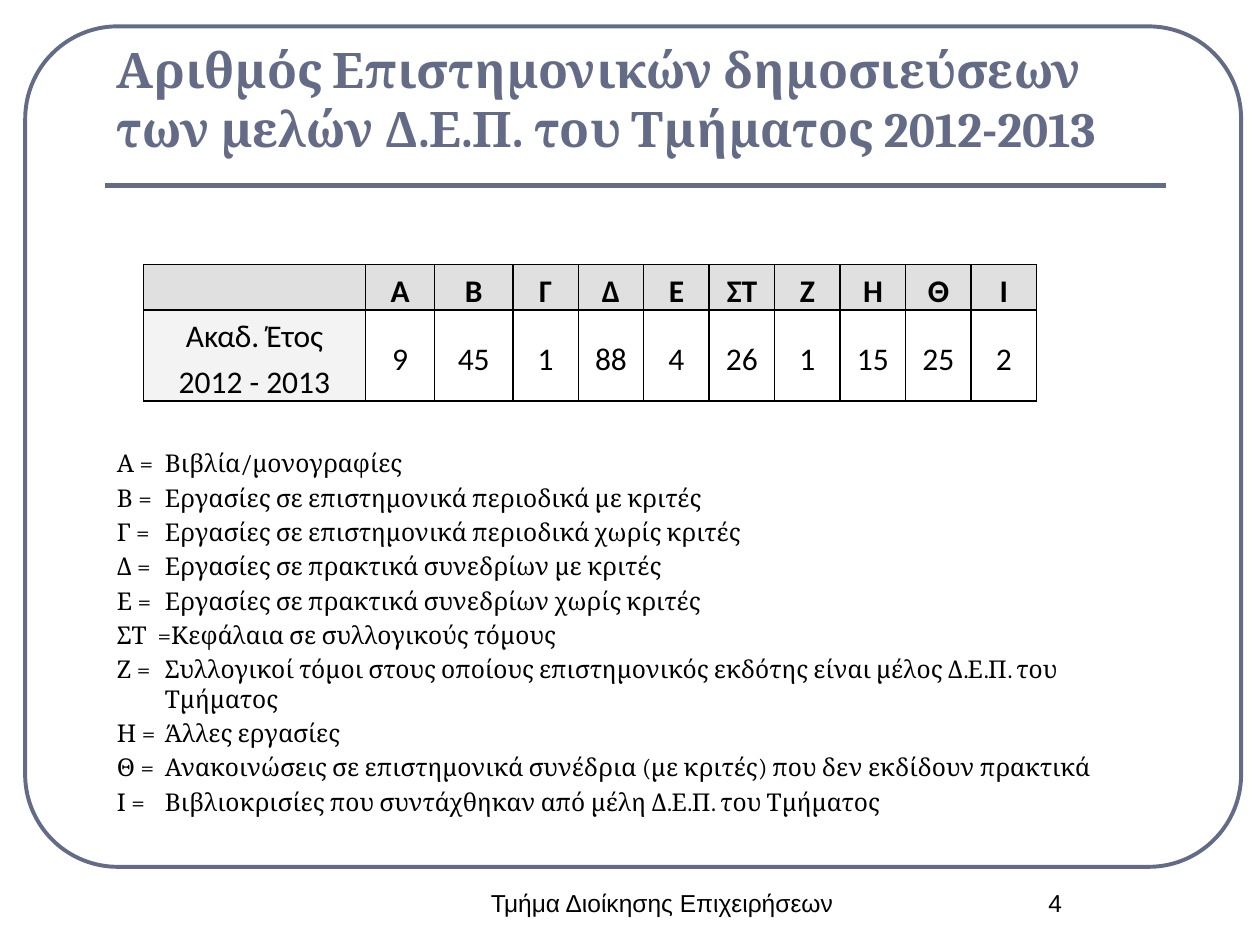
from dataclasses import dataclass

from lxml import etree
from pptx import Presentation
from pptx import util as u
from pptx.dml.color import RGBColor
from pptx.enum import shapes, text
from pptx.oxml.ns import qn

SLATE = RGBColor(0x64, 0x6B, 0x86)
BLACK = RGBColor(0, 0, 0)
GREY = RGBColor(0xE0, 0xE0, 0xE0)
PALE = RGBColor(0xF3, 0xF3, 0xF3)

WIDE, HIGH = 10, 7.5
LEFT, SPAN = 0.83, 8.42  # shared column of title, rule and key
HANG = 0.38
ROW = 0.36
COLS = [1.76, 0.55, 0.62] + [0.52] * 8


@dataclass
class Item:
    sign: str
    count: int
    label: str
    sep: str = " =\t"


@dataclass
class Style:
    size: float
    face: str
    color: RGBColor = BLACK
    bold: bool = False
    align: text.PP_ALIGN = text.PP_ALIGN.LEFT


ITEMS = [
    Item("Α", 9, "Βιβλία/μονογραφίες"),
    Item("Β", 45, "Εργασίες σε επιστημονικά περιοδικά με κριτές"),
    Item("Γ", 1, "Εργασίες σε επιστημονικά περιοδικά χωρίς κριτές"),
    Item("Δ", 88, "Εργασίες σε πρακτικά συνεδρίων με κριτές"),
    Item("Ε", 4, "Εργασίες σε πρακτικά συνεδρίων χωρίς κριτές"),
    Item("ΣΤ", 26, "Κεφάλαια σε συλλογικούς τόμους", "  ="),
    Item("Ζ", 1, "Συλλογικοί τόμοι στους οποίους επιστημονικός εκδότης "
                 "είναι μέλος Δ.Ε.Π. του Τμήματος"),
    Item("Η", 15, "Άλλες εργασίες"),
    Item("Θ", 25, "Ανακοινώσεις σε επιστημονικά συνέδρια (με κριτές) "
                  "που δεν εκδίδουν πρακτικά"),
    Item("Ι", 2, "Βιβλιοκρισίες που συντάχθηκαν από μέλη Δ.Ε.Π. του Τμήματος"),
]

CENTER = text.PP_ALIGN.CENTER
TITLE = Style(28, "Cambria", SLATE, True)
KEY = Style(14, "Cambria")
FOOT = Style(14, "Arial", align=CENTER)
HEAD = Style(18, "Calibri", bold=True, align=CENTER)
CELL = Style(18, "Calibri", align=CENTER)


def dress(para, style: Style) -> None:
    para.alignment = style.align
    font = para.font
    font.size, font.name, font.bold = u.Pt(style.size), style.face, style.bold
    font.color.rgb = style.color


def write(slide, box: tuple, lines: list[str], style: Style,
          anchor=text.MSO_ANCHOR.TOP):
    frame = slide.shapes.add_textbox(*map(u.Inches, box)).text_frame
    frame.word_wrap = True
    frame.vertical_anchor = anchor
    frame.text = "\n".join(lines)
    for para in frame.paragraphs:
        dress(para, style)
    return frame


def edge(cell, bottom: float) -> None:
    """Black cell borders, 1 pt apart from the bottom one."""
    props = cell._tc.get_or_add_tcPr()
    for i, (side, width) in enumerate(
            [("L", 1), ("R", 1), ("T", 1), ("B", bottom)]):
        line = etree.Element(qn(f"a:ln{side}"), w=str(u.Pt(width)))
        fill = etree.SubElement(line, qn("a:solidFill"))
        etree.SubElement(fill, qn("a:srgbClr"), val=str(BLACK))
        props.insert(i, line)


def fill_cell(cell, words: str, style: Style, gap: float, color=None,
              anchor=text.MSO_ANCHOR.MIDDLE, bottom: float = 1) -> None:
    cell.text = words
    cell.vertical_anchor = anchor
    cell.margin_left = cell.margin_right = u.Inches(0.07)
    cell.margin_top = cell.margin_bottom = 0
    para = cell.text_frame.paragraphs[0]
    dress(para, style)
    para.line_spacing = 1.2
    para.space_before = para.space_after = u.Pt(gap)
    if color is None:
        cell.fill.background()
    else:
        cell.fill.solid()
        cell.fill.fore_color.rgb = color
    edge(cell, bottom)


def draw_frame(slide) -> None:
    pane = slide.shapes.add_shape(
        shapes.MSO_SHAPE.ROUNDED_RECTANGLE,
        *map(u.Inches, (0.2, 0.21, 9.65, 6.67)))
    pane.adjustments[0] = 0.11
    pane.shadow.inherit = False
    pane.fill.background()
    pane.line.color.rgb, pane.line.width = SLATE, u.Pt(2.25)

    rule = slide.shapes.add_connector(
        shapes.MSO_CONNECTOR.STRAIGHT,
        *map(u.Inches, (LEFT, 1.47, LEFT + SPAN, 1.47)))
    rule.line.color.rgb, rule.line.width = SLATE, u.Pt(3)
    etree.SubElement(rule._element.spPr, qn("a:effectLst"))


def draw_table(slide) -> None:
    box = (1.14, 2.1, sum(COLS), 2.97 * ROW)
    table = slide.shapes.add_table(
        2, len(COLS), *map(u.Inches, box)).table
    for col, width in zip(table.columns, COLS):
        col.width = u.Inches(width)
    table.rows[0].height = u.Inches(ROW)
    table.rows[1].height = u.Inches(2 * ROW)

    fill_cell(table.cell(0, 0), "", HEAD, 0, GREY)
    fill_cell(table.cell(1, 0), "Ακαδ. Έτος 2012 - 2013", CELL, 2, PALE,
              text.MSO_ANCHOR.TOP, 1.5)
    for i, item in enumerate(ITEMS, 1):
        fill_cell(table.cell(0, i), item.sign, HEAD, 2, GREY)
        fill_cell(table.cell(1, i), str(item.count), CELL, 3, bottom=1.5)


def draw_key(slide) -> None:
    lines = [item.sign + item.sep + item.label for item in ITEMS]
    frame = write(slide, (LEFT, 3.51, SPAN, 2.99), lines, KEY)
    for para in frame.paragraphs:
        para.space_before = u.Pt(0.2 * KEY.size)
        props = para._p.get_or_add_pPr()
        props.set("marL", str(u.Inches(HANG)))
        props.set("indent", str(-u.Inches(HANG)))


def main() -> None:
    deck = Presentation()
    deck.slide_width, deck.slide_height = u.Inches(WIDE), u.Inches(HIGH)
    slide = deck.slides.add_slide(deck.slide_layouts[6])

    # Frame and heading
    draw_frame(slide)
    write(slide, (LEFT, 0.36, SPAN, 0.94),
          ["Αριθμός Επιστημονικών δημοσιεύσεων των μελών Δ.Ε.Π. "
           "του Τμήματος 2012-2013"], TITLE, text.MSO_ANCHOR.BOTTOM)

    # Counts and their key
    draw_key(slide)
    draw_table(slide)

    # Footer and page number
    write(slide, (3.67, 7, 3.17, 0.5), ["Τμήμα Διοίκησης Επιχειρήσεων"], FOOT)
    write(slide, (7.5, 7, 1.75, 0.5), ["4"], FOOT)
    deck.save("out.pptx")


if __name__ == "__main__":
    main()
